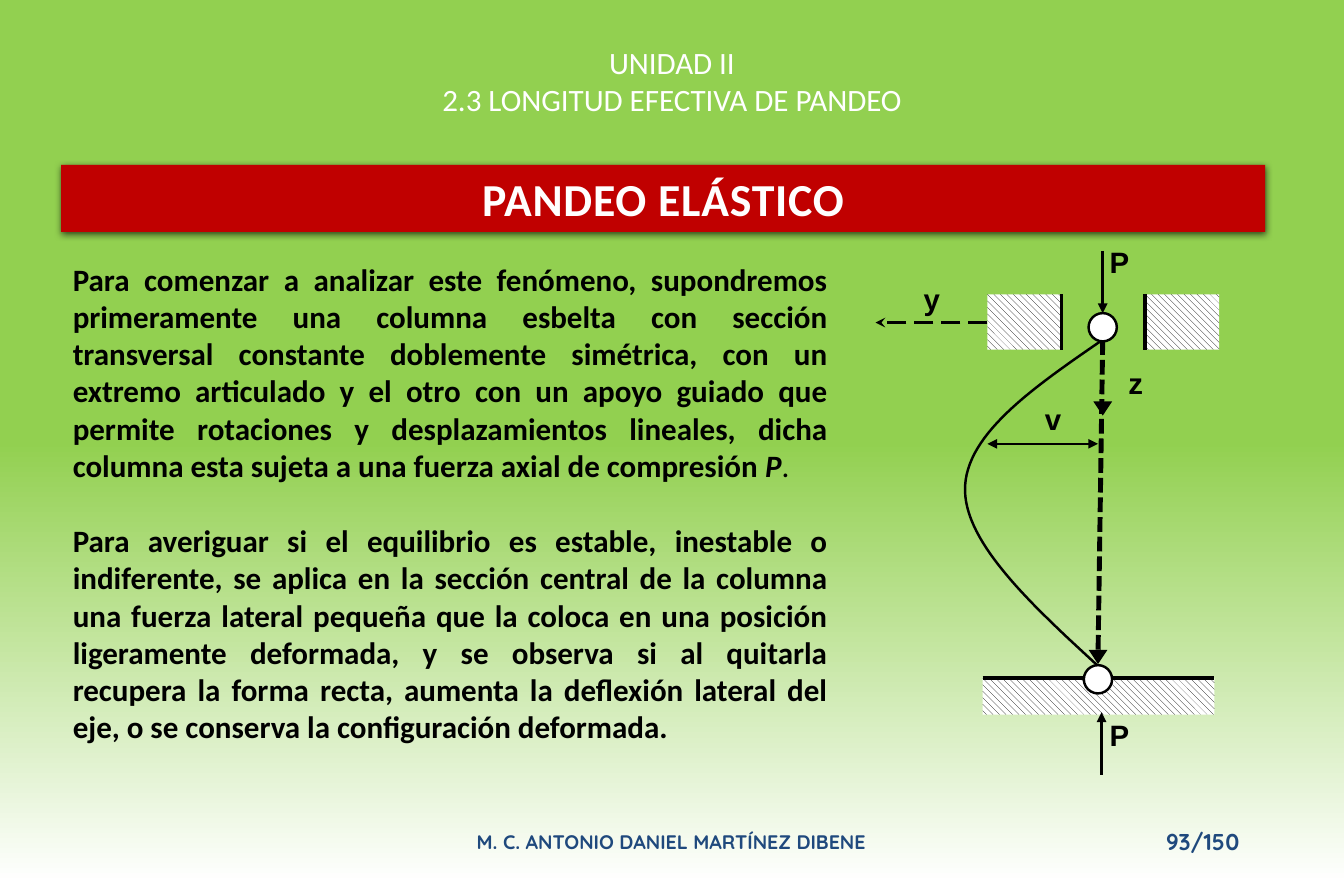
from copy import deepcopy

from lxml import etree
from pptx import Presentation
from pptx.dml.color import RGBColor
from pptx.enum.dml import MSO_LINE, MSO_PATTERN
from pptx.enum.shapes import MSO_CONNECTOR, MSO_SHAPE
from pptx.enum.text import MSO_ANCHOR, PP_ALIGN
from pptx.oxml.ns import qn
from pptx.util import Inches, Pt

RECT, OVAL, WEDGE = MSO_SHAPE.RECTANGLE, MSO_SHAPE.OVAL, MSO_SHAPE.ISOSCELES_TRIANGLE
HATCH = MSO_PATTERN.WIDE_DOWNWARD_DIAGONAL
SHORT, LONG = MSO_LINE.SQUARE_DOT, MSO_LINE.LONG_DASH
STRAIGHT = MSO_CONNECTOR.STRAIGHT
LEFT, CENTER, RIGHT, FULL = PP_ALIGN.LEFT, PP_ALIGN.CENTER, PP_ALIGN.RIGHT, PP_ALIGN.JUSTIFY
TOP, MIDDLE = MSO_ANCHOR.TOP, MSO_ANCHOR.MIDDLE
BLACK, WHITE, GREEN, RED, NAVY = "000000", "FFFFFF", "92D050", "C00000", "1F497D"

BODY = [
    [("Para comenzar a analizar este fenómeno, supondremos primeramente una columna "
      "esbelta con sección transversal constante doblemente simétrica, con un extremo "
      "articulado y el otro con un apoyo guiado que permite rotaciones y desplazamientos "
      "lineales, dicha columna esta sujeta a una fuerza axial de compresión ", {}),
     ("P", {"italic": True}), (".", {"bold": False})],
    [("Para averiguar si el equilibrio es estable, inestable o indiferente, se aplica en "
      "la sección central de la columna una fuerza lateral pequeña que la coloca en una "
      "posición ligeramente deformada, y se observa si al quitarla recupera la forma "
      "recta, aumenta la deflexión lateral del eje, o se conserva la configuración "
      "deformada.", {})],
]


def color(code):
    return RGBColor.from_string(code)


def paint(slide):
    """Fill the background: green to half height, then fading to white."""
    fill = slide.background.fill
    fill.gradient()
    fill.gradient_angle = 270
    first, last = fill.gradient_stops
    first.color.rgb, last.color.rgb = color(GREEN), color(WHITE)
    first.position, last.position = 0, 1
    stops = slide.element.find(".//" + qn("a:gsLst"))
    half = deepcopy(stops[0])
    half.set("pos", "50000")
    stops.insert(1, half)


def shade(parent, index):
    """Put a soft shadow straight below at the given child index."""
    effects = etree.Element(qn("a:effectLst"))
    outer = etree.SubElement(effects, qn("a:outerShdw"), blurRad="57150",
                             dist="19050", dir="5400000", rotWithShape="0")
    tone = etree.SubElement(outer, qn("a:srgbClr"), val=BLACK)
    etree.SubElement(tone, qn("a:alpha"), val="63000")
    parent.insert(index, effects)


def write(shape, lines, size=18, font="Calibri", tint=BLACK, bold=True,
          align=LEFT, anchor=TOP, gap=0):
    """Fill a shape with paragraphs, each a string or a list of (text, format)."""
    frame = shape.text_frame
    frame.word_wrap = True
    frame.vertical_anchor = anchor
    for i, line in enumerate(lines):
        par = frame.add_paragraph() if i else frame.paragraphs[0]
        par.alignment = align
        if i:
            par.space_before = Pt(gap)
        for text, extra in [(line, {})] if isinstance(line, str) else line:
            run = par.add_run()
            run.text = text
            run.font.size = Pt(size)
            run.font.name = font
            run.font.color.rgb = color(tint)
            run.font.bold = extra.get("bold", bold)
            run.font.italic = extra.get("italic", False)


def label(slide, lines, x, y, w, h, **style):
    box = slide.shapes.add_textbox(Inches(x), Inches(y), Inches(w), Inches(h))
    write(box, lines, **style)


def form(slide, kind, x, y, w, h, fill=None, edge=0, turn=0):
    """Add a preset shape; without a fill colour it is hatched."""
    shape = slide.shapes.add_shape(kind, Inches(x), Inches(y), Inches(w), Inches(h))
    shape.shadow.inherit = False
    shape.rotation = turn
    if fill:
        shape.fill.solid()
        shape.fill.fore_color.rgb = color(fill)
    else:
        shape.fill.patterned()
        shape.fill.pattern = HATCH
        shape.fill.fore_color.rgb = color(BLACK)
        shape.fill.back_color.rgb = color(WHITE)
    if edge:
        shape.line.color.rgb = color(BLACK)
        shape.line.width = Pt(edge)
    else:
        shape.line.fill.background()
    return shape


def line(slide, x1, y1, x2, y2, width=1.5, dash=None, head=None, tail=None):
    link = slide.shapes.add_connector(STRAIGHT, Inches(x1), Inches(y1),
                                      Inches(x2), Inches(y2))
    link.line.color.rgb = color(BLACK)
    link.line.width = Pt(width)
    if dash:
        link.line.dash_style = dash
    props = link.element.spPr
    stroke = props.find(qn("a:ln"))
    for tag, kind in (("a:headEnd", head), ("a:tailEnd", tail)):
        if kind:
            etree.SubElement(stroke, qn(tag), type=kind)
    etree.SubElement(props, qn("a:effectLst"))


def bezier(a, b, c, d, steps=30):
    for i in range(1, steps + 1):
        t = i / steps
        s = 1 - t
        yield tuple(Inches(s**3 * p + 3 * s * s * t * q + 3 * s * t * t * r + t**3 * e)
                    for p, q, r, e in zip(a, b, c, d))


def bow(slide):
    """Draw the buckled column."""
    start, mid, end = (9.35, 2.9), (8.2, 4.17), (9.41, 5.73)
    pen = slide.shapes.build_freeform(Inches(start[0]), Inches(start[1]))
    pen.add_line_segments(bezier(start, (8.77, 3.3), (8.19, 3.7), mid), close=False)
    pen.add_line_segments(bezier(mid, (8.21, 4.64), (8.81, 5.18), end), close=False)
    curve = pen.convert_to_shape()
    curve.shadow.inherit = False
    curve.fill.background()
    curve.line.color.rgb = color(BLACK)
    curve.line.width = Pt(1.5)


def banner(slide):
    bar = form(slide, RECT, 0.52, 1.4, 10.23, 0.57, RED)
    props = bar.element.spPr
    props.remove(props.find(qn("a:effectLst")))
    shade(props, len(props))
    write(bar, ["PANDEO ELÁSTICO"], size=28, tint="FFFEFE", align=CENTER, anchor=MIDDLE)
    style = bar.element.find(".//" + qn("a:rPr"))
    style.set("spc", "50")
    shade(style, style.index(style.find(qn("a:solidFill"))) + 1)


def column(slide):
    for x, edge in ((9.73, 9.73), (8.39, 9.02)):
        form(slide, RECT, x, 2.5, 0.63, 0.47)
        line(slide, edge, 2.5, edge, 2.97, 2.25)
    form(slide, RECT, 8.35, 5.76, 1.97, 0.31)
    line(slide, 9.37, 2.89, 9.33, 5.57, 3, SHORT)
    for x, y in ((9.29, 3.41), (9.25, 5.52)):
        form(slide, WEDGE, x, y, 0.16, 0.12, BLACK, turn=180)
    line(slide, 8.35, 5.76, 10.32, 5.76, 2.25)
    bow(slide)
    for x, y in ((9.25, 2.66), (9.21, 5.65)):
        form(slide, OVAL, x, y, 0.24, 0.24, WHITE, edge=1.5)
    line(slide, 9.37, 2.13, 9.37, 2.66, tail="triangle")
    line(slide, 9.36, 6.58, 9.36, 6.05, tail="triangle")
    line(slide, 8.39, 2.74, 7.44, 2.74, dash=LONG, tail="stealth")
    line(slide, 8.39, 3.77, 9.33, 3.77, head="triangle", tail="triangle")
    for text, x, y in (("P", 9.33, 2.02), ("P", 9.33, 6.04), ("v", 8.78, 3.36),
                       ("z", 9.49, 3.05), ("y", 7.75, 2.34)):
        label(slide, [text], x, y, 0.63, 0.4, font="Arial")


def main():
    deck = Presentation()
    deck.slide_width, deck.slide_height = Inches(11.42), Inches(7.5)
    slide = deck.slides.add_slide(deck.slide_layouts[6])
    paint(slide)
    banner(slide)
    label(slide, BODY, 0.52, 2.16, 6.61, 4.86, size=19, align=FULL, gap=23.2)
    label(slide, ["UNIDAD II", "2.3 LONGITUD EFECTIVA DE PANDEO"],
          1.89, 0.32, 7.64, 0.74, size=19, tint=WHITE, bold=False, align=CENTER)
    column(slide)
    foot = {"font": "Quicksand", "tint": NAVY, "anchor": MIDDLE}
    label(slide, ["M. C. ANTONIO DANIEL MARTÍNEZ DIBENE"], 3.78, 6.95, 3.85, 0.4,
          size=12, align=CENTER, **foot)
    label(slide, ["93/150"], 8.06, 6.95, 2.57, 0.4, size=14, align=RIGHT, **foot)
    deck.save("out.pptx")


if __name__ == "__main__":
    main()
